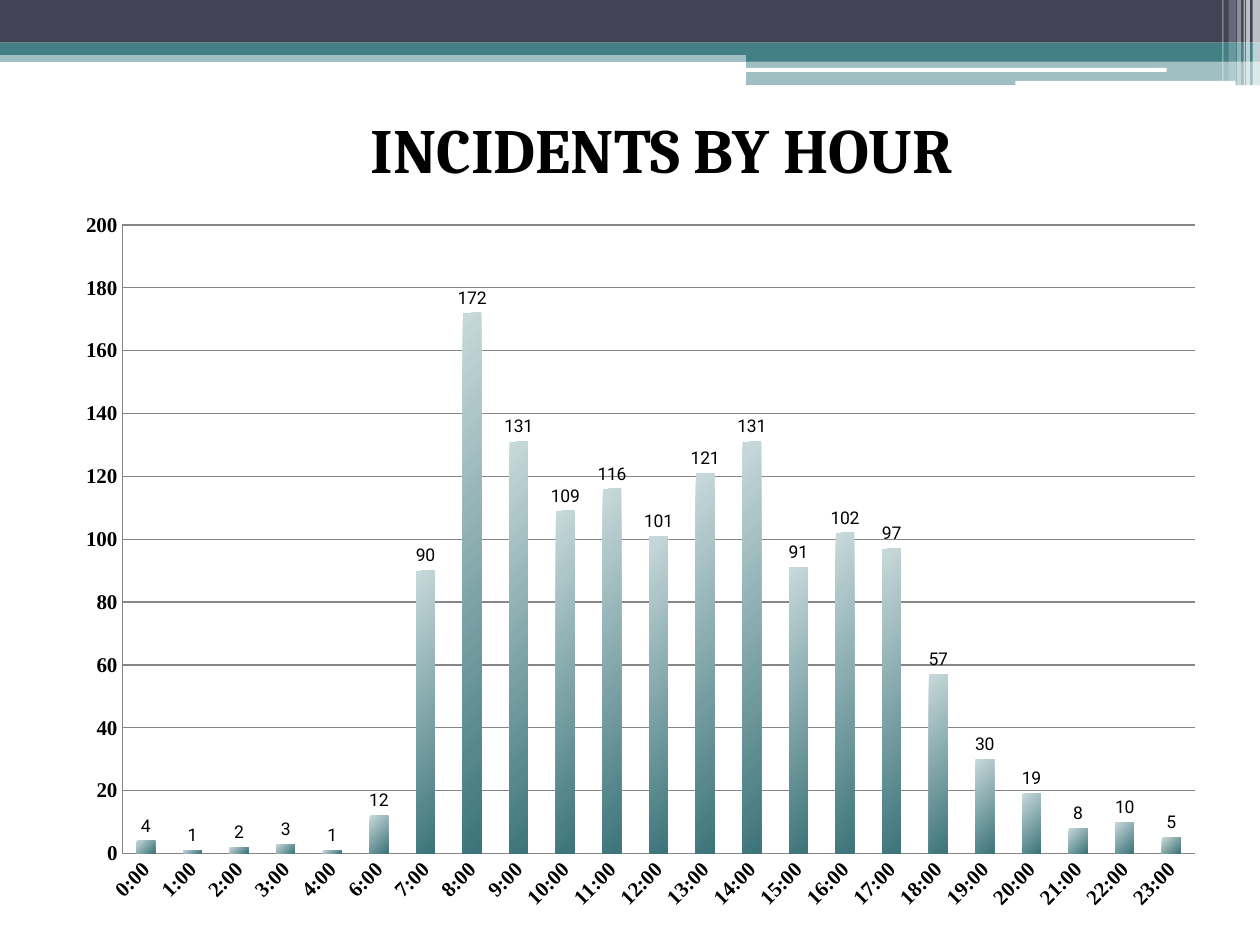
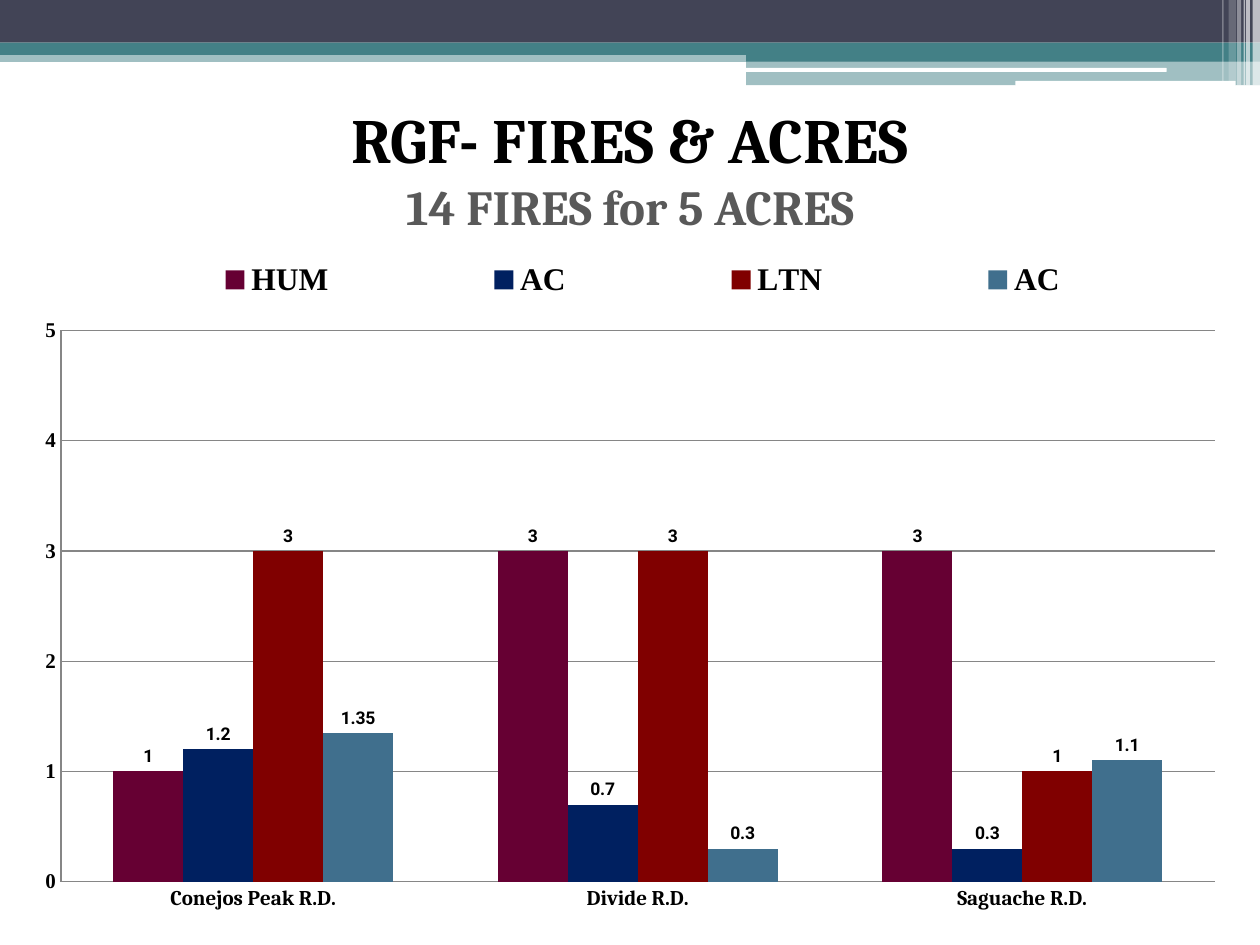
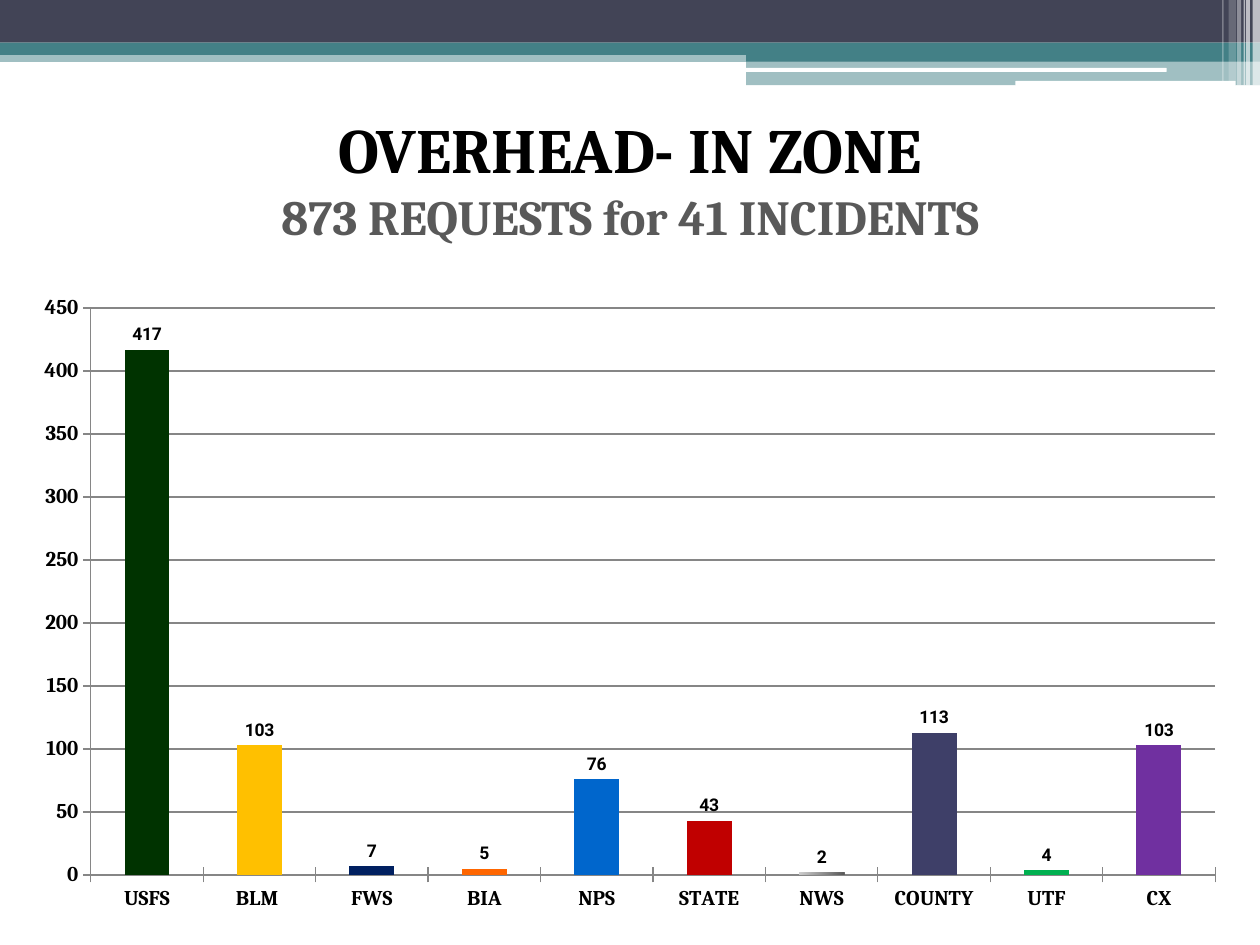
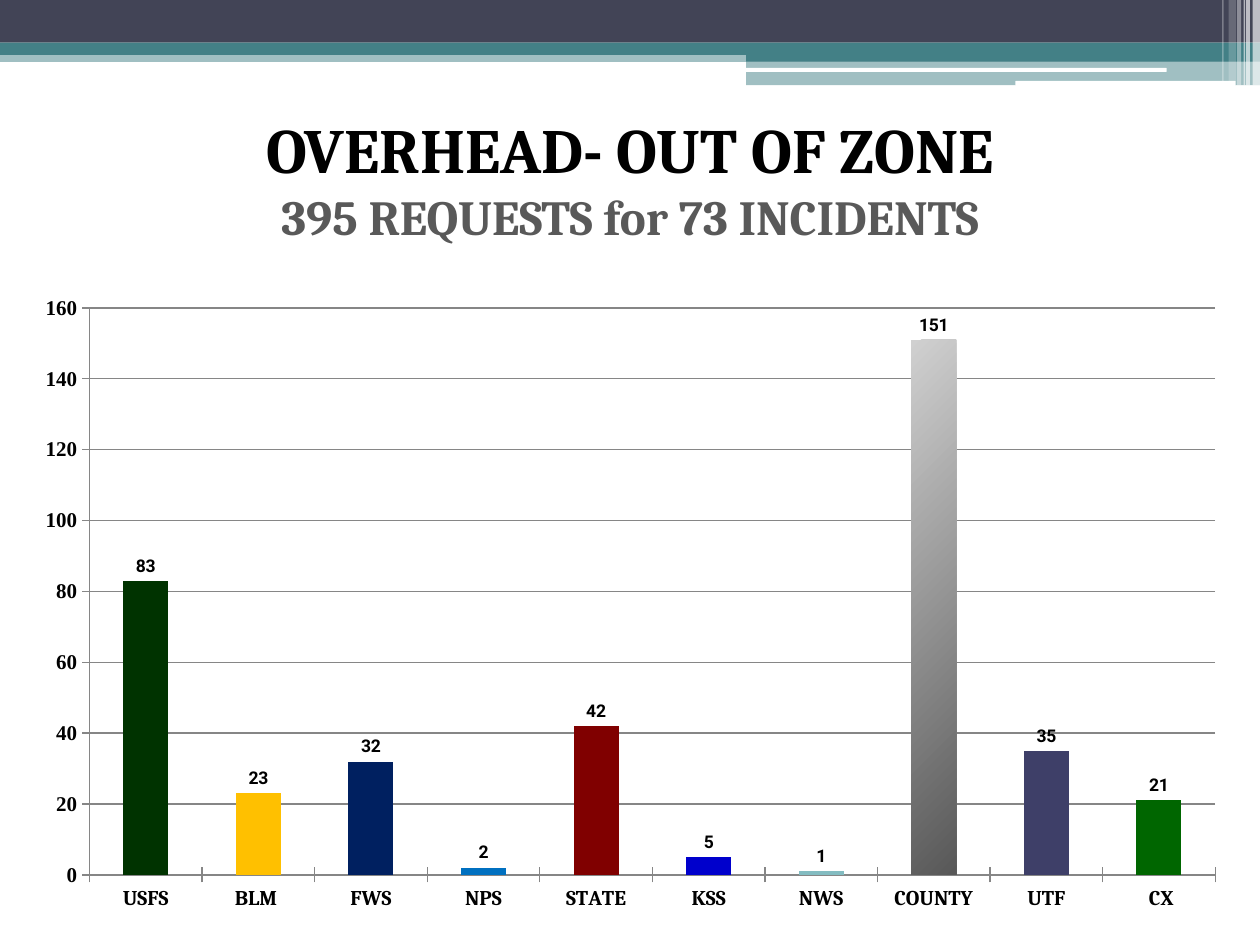
from lxml import etree
from pptx import Presentation
from pptx import util as u
from pptx.chart.data import CategoryChartData
from pptx.dml.color import RGBColor
from pptx.enum import chart as ch, shapes as sh, text as tx
from pptx.oxml.ns import qn

BLACK = RGBColor(0x00, 0x00, 0x00)
WHITE = RGBColor(0xFF, 0xFF, 0xFF)
SLATE = RGBColor(0x42, 0x44, 0x56)
TEAL = RGBColor(0x43, 0x80, 0x86)
GREY = RGBColor(0x59, 0x59, 0x59)
RULE = RGBColor(0x86, 0x86, 0x86)
PLUM = RGBColor(0x66, 0x00, 0x33)
NAVY = RGBColor(0x00, 0x20, 0x60)
MAROON = RGBColor(0x80, 0x00, 0x00)
STEEL = RGBColor(0x40, 0x6F, 0x8D)
FOREST = RGBColor(0x00, 0x33, 0x00)
GOLD = RGBColor(0xFF, 0xC0, 0x00)
ORANGE = RGBColor(0xFF, 0x66, 0x00)
BLUE = RGBColor(0x00, 0x66, 0xCC)
RED = RGBColor(0xC0, 0x00, 0x00)
INDIGO = RGBColor(0x3E, 0x3F, 0x68)
GREEN = RGBColor(0x00, 0xB0, 0x50)
PURPLE = RGBColor(0x70, 0x30, 0xA0)
AZURE = RGBColor(0x00, 0x70, 0xC0)
COBALT = RGBColor(0x00, 0x00, 0xCC)
AQUA = RGBColor(0x83, 0xBC, 0xC1)
LEAF = RGBColor(0x00, 0x66, 0x00)
MIST = RGBColor(0xC8, 0xD9, 0xDB)
DEEP = RGBColor(0x3C, 0x74, 0x79)
SILVER = RGBColor(0xD0, 0xD0, 0xD0)
ASH = RGBColor(0x58, 0x58, 0x58)

SERIF, TIMES, SANS = "Cambria", "Times New Roman", "Roboto"
TEAL_FADE = (MIST, DEEP)
GREY_FADE = (SILVER, ASH)
WIDE = 25.4

BANDS = [
    ((0, 1.02, WIDE, 0.23), TEAL, 50),
    ((0, 0, WIDE, 0.86), SLATE, 100),
    ((0, 0.86, WIDE, 0.25), TEAL, 100),
    ((15.04, 0.99, 10.36, 0.25), TEAL, 100),
    ((15.04, 1.22, 10.36, 0.5), TEAL, 50),
]
PILLS = [(15.01, 1.37, 8.51, 0.08), (20.47, 1.63, 4.44, 0.1)]
STRIPES = [
    (25.25, 0.15, 1.73, 65),
    (25.12, 0.08, 1.73, 65),
    (25.07, 0.03, 1.73, 60),
    (24.94, 0.08, 1.73, 40),
    (24.77, 0.15, 1.63, 20),
    (24.64, 0.03, 1.63, 30),
]


def apply(item, **style):
    for key, val in style.items():
        setattr(item, key, val)


def cms(box):
    return [u.Cm(val) for val in box]


class Deck:
    def __init__(self):
        self.prs = Presentation()
        apply(self.prs, slide_width=u.Cm(WIDE), slide_height=u.Cm(19.05))
        self.slide = None

    def font(self, font, size, name=SERIF, bold=True, color=BLACK):
        apply(font, size=u.Pt(size), name=name, bold=bold)
        font.color.rgb = color

    def open(self):
        first = self.slide is None
        self.slide = self.prs.slides.add_slide(self.prs.slide_layouts[5])
        if first:
            self.frame()

    def frame(self):
        rect, pill = sh.MSO_SHAPE.RECTANGLE, sh.MSO_SHAPE.ROUNDED_RECTANGLE
        parts = [self.band(rect, *row) for row in BANDS]
        parts += [self.band(pill, box, WHITE, 100) for box in PILLS]
        parts += [self.band(rect, (x, 0, w, h), WHITE, alpha)
                  for x, w, h, alpha in STRIPES]
        tree = self.prs.slide_master.shapes._spTree
        for spot, part in enumerate(parts):
            part._element.nvSpPr.cNvPr.set("id", str(100 + spot))
            tree.insert(2 + spot, part._element)

    def band(self, kind, box, color, alpha):
        shape = self.slide.shapes.add_shape(kind, *cms(box))
        shape.shadow.inherit = False
        shape.line.fill.background()
        shape.fill.solid()
        shape.fill.fore_color.rgb = color
        if alpha < 100:
            tint = shape._element.spPr.find(".//" + qn("a:srgbClr"))
            etree.SubElement(tint, qn("a:alpha")).set("val", str(alpha * 1000))
        return shape

    def title(self, box, head, sub=None):
        shape = self.slide.shapes.title
        apply(shape, **dict(zip(("left", "top", "width", "height"), cms(box))))
        frame = shape.text_frame
        apply(frame, word_wrap=True, auto_size=tx.MSO_AUTO_SIZE.SHAPE_TO_FIT_TEXT,
              vertical_anchor=tx.MSO_ANCHOR.TOP)
        frame.text = "\n".join(filter(None, (head, sub)))
        for para, size, color in zip(frame.paragraphs, (36, 28), (BLACK, GREY)):
            para.alignment = tx.PP_ALIGN.CENTER
            run = para.runs[0]
            self.font(run.font, size, color=color)
            self.edge(run)

    def edge(self, run):
        line = etree.Element(qn("a:ln"), w=str(u.Pt(0.75)))
        fill = etree.SubElement(line, qn("a:solidFill"))
        etree.SubElement(fill, qn("a:srgbClr")).set("val", str(BLACK))
        run._r.get_or_add_rPr().insert(0, line)

    def chart(self, box, cats, rows, plot, fmt=None, bold=True):
        data = CategoryChartData()
        data.categories = cats
        if fmt:
            data.categories.number_format = fmt
        for name, vals in rows:
            data.add_series(name, vals)
        kind = ch.XL_CHART_TYPE.COLUMN_CLUSTERED
        chart = self.slide.shapes.add_chart(kind, *cms(box), data).chart
        apply(chart, has_title=False, has_legend=False)
        self.font(chart.font, 18, bold=False)
        bars = chart.plots[0]
        apply(bars, gap_width=150, overlap=0, vary_by_categories=False,
              has_data_labels=True)
        apply(bars.data_labels, show_value=True,
              position=ch.XL_LABEL_POSITION.OUTSIDE_END)
        self.font(bars.data_labels.font, 10, SANS, bold)
        self.place(chart._chartSpace.chart.plotArea, 0, plot, inner=True)
        return chart

    def place(self, host, spot, box, inner=False):
        for old in host.findall(qn("c:layout")):
            host.remove(old)
        layout = etree.Element(qn("c:layout"))
        manual = etree.SubElement(layout, qn("c:manualLayout"))
        rules = [("layoutTarget", "inner")] if inner else []
        rules += [("xMode", "edge"), ("yMode", "edge")]
        rules += [(key, str(val / 100)) for key, val in zip("xywh", box)]
        for tag, val in rules:
            etree.SubElement(manual, qn("c:" + tag)).set("val", val)
        host.insert(spot, layout)

    def axes(self, chart, fonts, tick, **scale):
        mark = ch.XL_TICK_MARK
        for axis, name in zip((chart.category_axis, chart.value_axis), fonts):
            apply(axis, major_tick_mark=tick, minor_tick_mark=mark.NONE)
            self.font(axis.tick_labels.font, 12, name)
            self.rule(axis.format.line)
        apply(chart.value_axis, has_major_gridlines=True, **scale)
        self.rule(chart.value_axis.major_gridlines.format.line)

    def rule(self, line):
        line.width = u.Pt(0.75)
        line.color.rgb = RULE

    def legend(self, chart, box):
        chart.has_legend = True
        apply(chart.legend, position=ch.XL_LEGEND_POSITION.TOP,
              include_in_layout=False)
        self.font(chart.legend.font, 18, TIMES)
        self.place(chart.legend._element, 1, box)

    def paint(self, item, color):
        fill = item.format.fill
        if isinstance(color, RGBColor):
            fill.solid()
            fill.fore_color.rgb = color
            return
        fill.gradient()
        fill.gradient_angle = 315
        for stop, tone in zip(fill.gradient_stops, color):
            stop.color.rgb = tone

    def hours(self):
        self.open()
        self.title((1.7, 2.11, 23.29, 1.8), "INCIDENTS BY HOUR")
        cats = [hour / 24 for hour in range(24) if hour != 5]
        vals = [4, 1, 2, 3, 1, 12, 90, 172, 131, 109, 116, 101,
                121, 131, 91, 102, 97, 57, 30, 19, 8, 10, 5]
        chart = self.chart((1.27, 4.01, 23.29, 14.6), cats, [("Series 1", vals)],
                           (5.15, 3.6, 92.8, 86.8), "h:mm", False)
        self.axes(chart, (TIMES, TIMES), ch.XL_TICK_MARK.NONE)
        apply(chart.category_axis.tick_labels, number_format="h:mm",
              number_format_is_linked=False)
        body = chart.category_axis._element.find(".//" + qn("a:bodyPr"))
        body.set("rot", "-2700000")
        self.paint(chart.series[0], TEAL_FADE)

    def fires(self):
        self.open()
        self.title((0, 1.9, WIDE, 3), "RGF- FIRES & ACRES", "14 FIRES for 5 ACRES")
        cats = ["Conejos Peak R.D.", "Divide R.D.", "Saguache R.D."]
        rows = [("HUM", (1, 3, 3)), ("AC", (1.2, 0.7, 0.3)),
                ("LTN", (3, 3, 1)), ("AC", (1.35, 0.3, 1.1))]
        chart = self.chart((0.43, 5.03, 24.56, 13.59), cats, rows,
                           (3.25, 12, 94.7, 81.8))
        self.axes(chart, (SERIF, TIMES), ch.XL_TICK_MARK.NONE,
                  minimum_scale=0, maximum_scale=5, major_unit=1)
        self.legend(chart, (4, 1, 94, 7))
        for item, color in zip(chart.series, (PLUM, NAVY, MAROON, STEEL)):
            self.paint(item, color)

    def crews(self, head, sub, rows, face, left):
        self.open()
        self.title((0, 2.11, WIDE, 3), head, sub)
        cats, vals, colors = zip(*rows)
        chart = self.chart((0.43, 5.72, 24.56, 12.9), cats, [("Series 1", vals)],
                           (left, 3.8, 98 - left, 88.6))
        self.axes(chart, (SERIF, face), ch.XL_TICK_MARK.CROSS)
        for spot, color in enumerate(colors):
            self.paint(chart.series[0].points[spot], color)


def main():
    deck = Deck()
    deck.hours()
    deck.fires()
    deck.crews("OVERHEAD- IN ZONE", "873 REQUESTS for 41 INCIDENTS", [
        ("USFS", 417, FOREST), ("BLM ", 103, GOLD), ("FWS", 7, NAVY),
        ("BIA", 5, ORANGE), ("NPS", 76, BLUE), ("STATE", 43, RED),
        ("NWS", 2, GREY_FADE), ("COUNTY", 113, INDIGO), ("UTF", 4, GREEN),
        ("CX", 103, PURPLE)], SERIF, 5.7)
    deck.crews("OVERHEAD- OUT OF ZONE", "395 REQUESTS for 73 INCIDENTS", [
        ("USFS", 83, FOREST), ("BLM ", 23, GOLD), ("FWS", 32, NAVY),
        ("NPS", 2, AZURE), ("STATE", 42, MAROON), ("KSS", 5, COBALT),
        ("NWS", 1, AQUA), ("COUNTY", 151, GREY_FADE), ("UTF", 35, INDIGO),
        (" CX", 21, LEAF)], TIMES, 5.6)
    deck.prs.save("out.pptx")


if __name__ == "__main__":
    main()
